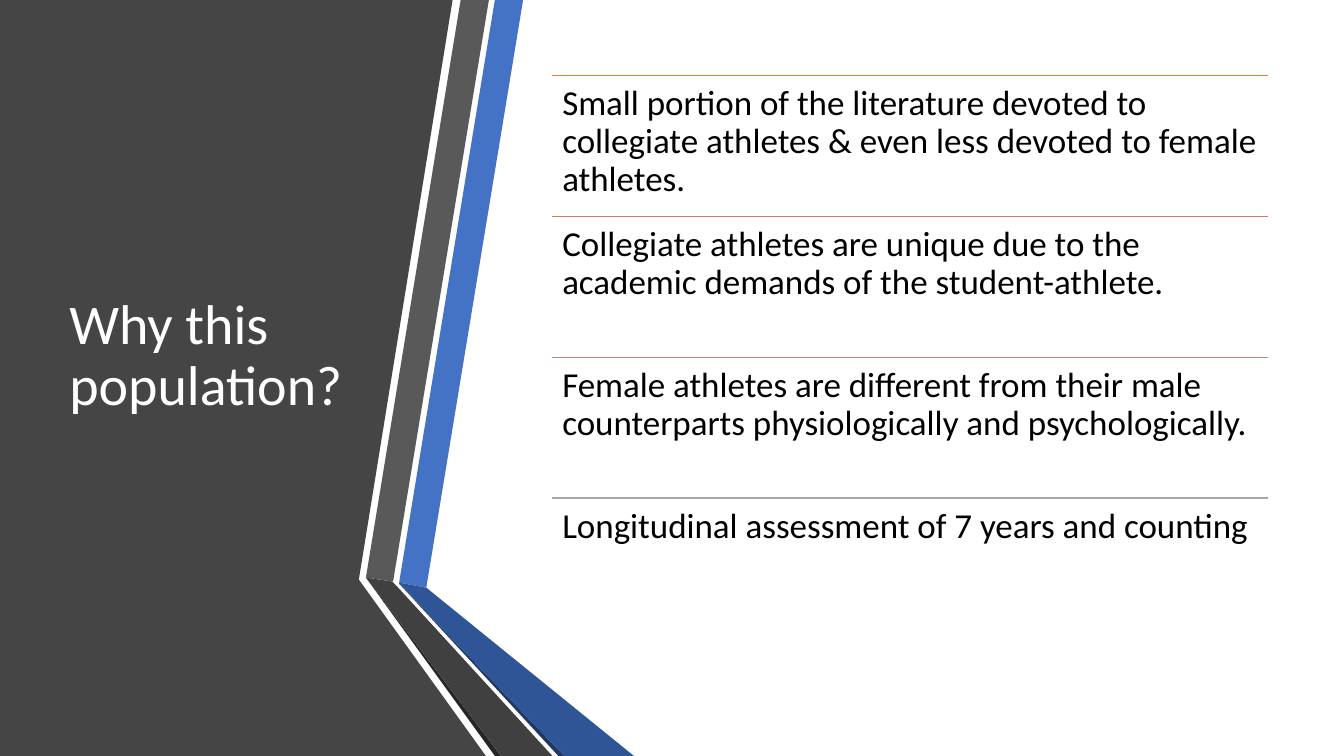
from pptx import Presentation, util as u
from pptx.dml.color import RGBColor
from pptx.enum import shapes, text
from pptx.oxml.ns import qn
from lxml import etree

COLORS = {
    "panel": "454545", "blue": "4472C4", "gray": "595959",
    "gray_edge": "262626", "blue_edge": "203864",
    "blue_fold": "2F5597", "gray_fold": "404040",
    "white": "FFFFFF", "black": "000000",
}
TITLE = "Why this population?"
REASONS = [
    ("Small portion of the literature devoted to collegiate athletes & even less devoted to female athletes.", "ED7D31"),
    ("Collegiate athletes are unique due to the academic demands of the student-athlete.", "D17B5C"),
    ("Female athletes are different from their male counterparts physiologically and psychologically.", "B98A82"),
    ("Longitudinal assessment of 7 years and counting", "A5A5A5"),
]
WIDTH, HEIGHT = 13.333, 7.5
RIBBONS = [
    ("panel", [(0, 0), (4.49, 0), (3.56, 5.75), (4.82, HEIGHT), (0, HEIGHT)]),
    ("blue", [(3.96, 5.78), (4.23, 5.83), (5.19, 0), (4.91, 0)]),
    ("gray", [(4.85, 0), (4.57, 0), (3.63, 5.73), (3.9, 5.77)]),
    ("gray_edge", [(3.63, 5.73), (4.91, HEIGHT), (4.97, HEIGHT)]),
    ("blue_edge", [(3.96, 5.79), (5.54, HEIGHT), (5.6, HEIGHT)]),
    ("blue_fold", [(3.96, 5.79), (5.6, HEIGHT), (6.29, HEIGHT), (4.23, 5.83), (3.96, 5.78)]),
    ("gray_fold", [(5.48, HEIGHT), (3.95, 5.83), (3.89, 5.77), (3.63, 5.73), (4.97, HEIGHT)]),
]
TOP = HEIGHT / 10
LIST_LEFT, LIST_WIDTH = 5.48, 7.1
LIST_HEIGHT = 5.59
ROW = LIST_HEIGHT / len(REASONS)
UNITS = 100


def rgb(value):
    return RGBColor.from_string(value)


def add_ribbon(page, color, points):
    scaled = [(x * UNITS, y * UNITS) for x, y in points]
    builder = page.shapes.build_freeform(*scaled[0], scale=u.Inches(1) / UNITS)
    builder.add_line_segments(scaled[1:], close=True)
    ribbon = builder.convert_to_shape()
    ribbon.shadow.inherit = False
    ribbon.fill.solid()
    ribbon.fill.fore_color.rgb = rgb(COLORS[color])
    ribbon.line.fill.background()


def add_text(page, words, place, size, color, frame_format, para_format):
    box = page.shapes.add_textbox(*map(u.Inches, place))
    frame = box.text_frame
    for name, value in frame_format.items():
        setattr(frame, name, value)
    para = frame.paragraphs[0]
    for name, value in para_format.items():
        setattr(para, name, value)
    span = para.add_run()
    span.text = words
    for name, value in {"name": "Calibri", "size": u.Pt(size)}.items():
        setattr(span.font, name, value)
    span.font.color.rgb = rgb(COLORS[color])


def add_rule(page, y, color):
    ends = (LIST_LEFT, y, LIST_LEFT + LIST_WIDTH, y)
    rule = page.shapes.add_connector(shapes.MSO_CONNECTOR.STRAIGHT, *map(u.Inches, ends))
    rule.line.width = u.Pt(1)
    rule.line.color.rgb = rgb(color)
    etree.SubElement(rule.element.spPr, qn("a:effectLst"))


def main():
    deck = Presentation()
    deck.slide_width, deck.slide_height = u.Inches(WIDTH), u.Inches(HEIGHT)
    page = deck.slides.add_slide(deck.slide_layouts[6])
    for color, points in RIBBONS:
        add_ribbon(page, color, points)

    add_text(page, TITLE, (0.59, TOP, 3.04, 5.58), 40, "white",
             {"word_wrap": True, "vertical_anchor": text.MSO_ANCHOR.MIDDLE},
             {"line_spacing": 0.9})

    margins = {f"margin_{side}": u.Inches(0.1) for side in ("left", "top", "right", "bottom")}
    for index, (reason, color) in enumerate(REASONS):
        y = TOP + index * ROW
        add_rule(page, y, color)
        add_text(page, reason, (LIST_LEFT, y, LIST_WIDTH, ROW), 25, "black",
                 {"word_wrap": True, "vertical_anchor": text.MSO_ANCHOR.TOP, **margins},
                 {"line_spacing": 0.9, "space_after": u.Pt(8.75)})
    deck.save("out.pptx")


if __name__ == "__main__":
    main()
